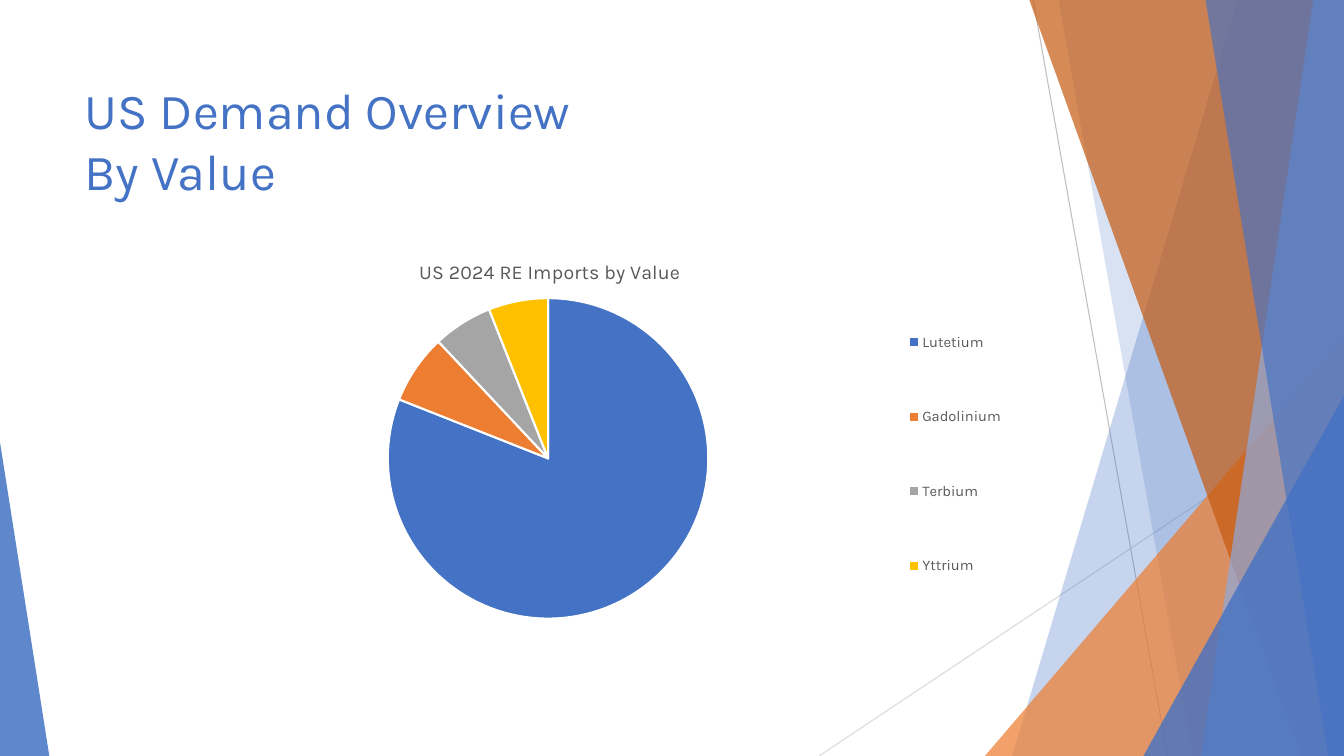
from lxml import etree
from pptx import Presentation, util as u
from pptx.chart.data import CategoryChartData
from pptx.dml.color import RGBColor
from pptx.enum import chart as charts, shapes, text
from pptx.oxml.ns import qn

PX = 9525
FONT = "Karla"
BLUE, ORANGE, GREY, GOLD = "4472C4", "ED7D31", "A5A5A5", "FFC000"
INK = "595959"

RAYS = [((984, 0), (1112, 720), "BFBFBF"), ((1280, 387), (780, 720), "D9D9D9")]
BACK_BANDS = [(1179, 964, BLUE, 30), (1008, 1136, BLUE, 20)]
FRONT_BANDS = [(980, 1239, "C55A11", 70), (1251, 1144, "8FAADC", 70),
               (1148, 1265, BLUE, 65)]
SLICES = [("Lutetium", 81, BLUE), ("Gadolinium", 7, ORANGE),
          ("Terbium", 6, GREY), ("Yttrium", 6, GOLD)]


def px(*lengths):
    return [u.Emu(length * PX) for length in lengths]


def rgb(value):
    return RGBColor.from_string(value)


def style_font(font, size, color):
    font.name = FONT
    font.size = u.Pt(size)
    font.bold = False
    font.color.rgb = rgb(color)


def paint(shape, color, opacity):
    shape.shadow.inherit = False
    shape.fill.solid()
    shape.fill.fore_color.rgb = rgb(color)
    shape.line.fill.background()
    tint = shape.fill._xPr.find(qn("a:solidFill"))[0]
    etree.SubElement(tint, qn("a:alpha"), val=str(opacity * 1000))


def add_ray(slide, start, end, color):
    ray = slide.shapes.add_connector(
        shapes.MSO_CONNECTOR.STRAIGHT, *px(*start, *end))
    ray.line.color.rgb = rgb(color)
    ray.line.width = u.Pt(0.75)
    etree.SubElement(ray._element.spPr, qn("a:effectLst"))


def add_band(slide, box, top_left, bottom_left, color, opacity):
    top, right, bottom = box
    outline = slide.shapes.build_freeform(top_left, top, scale=PX)
    outline.add_line_segments(
        [(right, top), (right, bottom), (bottom_left, bottom)], close=True)
    paint(outline.convert_to_shape(), color, opacity)


def add_wedge(slide, box, apex, color, opacity):
    wedge = slide.shapes.add_shape(
        shapes.MSO_SHAPE.ISOSCELES_TRIANGLE, *px(*box))
    wedge.adjustments[0] = apex
    paint(wedge, color, opacity)


def add_facets(slide, box):
    for ray in RAYS:
        add_ray(slide, *ray)
    for band in BACK_BANDS:
        add_band(slide, box, *band)
    add_wedge(slide, (938, 320, 342, 400), 1, ORANGE, 72)
    for band in FRONT_BANDS:
        add_band(slide, box, *band)
    add_wedge(slide, (1089, 377, 191, 343), 1, BLUE, 80)
    add_wedge(slide, (0, 421, 47, 299), 0, BLUE, 85)


def add_heading(slide, box):
    frame = slide.shapes.add_textbox(*px(*box)).text_frame
    frame.word_wrap = True
    frame.vertical_anchor = text.MSO_ANCHOR.MIDDLE
    heading = frame.paragraphs[0]
    heading.text = "US Demand Overview\vBy Value"
    style_font(heading.font, 36, BLUE)


def place(part, index, inner=False, **fractions):
    for old in part.findall(qn("c:layout")):
        part.remove(old)
    layout = etree.Element(qn("c:layout"))
    part.insert(index, layout)
    manual = etree.SubElement(layout, qn("c:manualLayout"))
    if inner:
        etree.SubElement(manual, qn("c:layoutTarget"), val="inner")
    for side in "xy":
        etree.SubElement(manual, qn(f"c:{side}Mode"), val="edge")
    for side, fraction in fractions.items():
        etree.SubElement(manual, qn(f"c:{side}"), val=str(fraction))


def add_imports_pie(slide, box):
    imports = CategoryChartData()
    imports.categories = [name for name, _, _ in SLICES]
    imports.add_series("Series 1", [share for _, share, _ in SLICES])
    pie = slide.shapes.add_chart(
        charts.XL_CHART_TYPE.PIE, *px(*box), imports).chart
    style_font(pie.font, 10, "000000")

    pie.has_title = True
    caption = pie.chart_title.text_frame.paragraphs[0]
    caption.text = "US 2024 RE Imports by Value"
    style_font(caption.font, 14, INK)
    pie.chart_title.include_in_layout = False
    place(pie.chart_title._element, 1, x=0.36, y=0.04)

    pie.has_legend = True
    pie.legend.position = charts.XL_LEGEND_POSITION.BOTTOM
    pie.legend.include_in_layout = False
    style_font(pie.legend.font, 10.5, INK)
    place(pie.legend._element, 1, x=0.87, y=0.09, w=0.12, h=0.83)

    plot = pie.plots[0]
    plot.vary_by_categories = True
    place(plot._element.getparent(), 0, inner=True,
          x=0.33, y=0.14, w=0.34, h=0.75)
    for index, (_, _, color) in enumerate(SLICES):
        slice_format = plot.series[0].points[index].format
        slice_format.fill.solid()
        slice_format.fill.fore_color.rgb = rgb(color)
        slice_format.line.color.rgb = rgb("FFFFFF")
        slice_format.line.width = u.Pt(1.5)


def main():
    deck = Presentation()
    deck.slide_width, deck.slide_height = px(1280, 720)
    slide = deck.slides.add_slide(deck.slide_layouts[6])
    add_facets(slide, (-1, 1280, 720))
    add_heading(slide, (71, 64, 902, 138))
    add_imports_pie(slide, (71, 227, 902, 407))
    deck.save("out.pptx")


if __name__ == "__main__":
    main()
